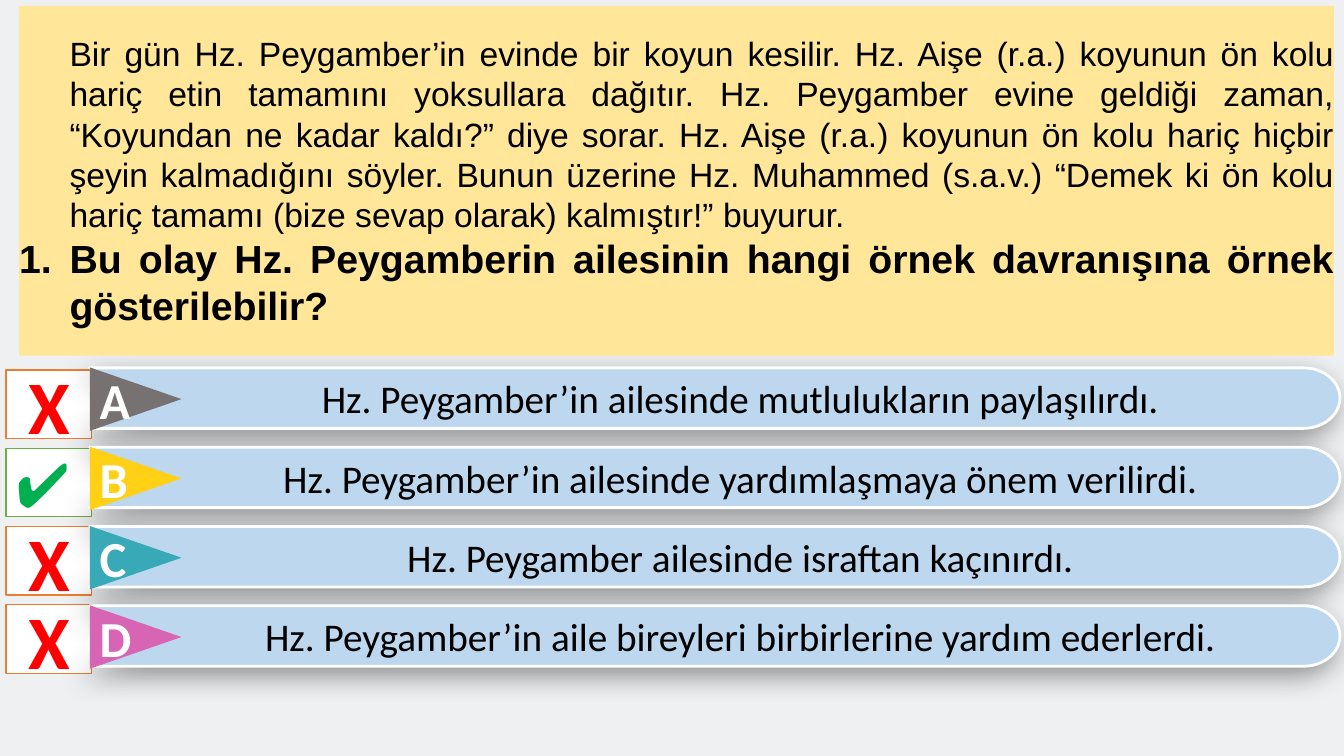
from dataclasses import dataclass
from math import cos, pi, sin
from typing import Any

from lxml.etree import SubElement
from pptx import Presentation
from pptx.dml.color import RGBColor
from pptx.enum.shapes import MSO_SHAPE
from pptx.enum.text import MSO_ANCHOR, PP_ALIGN
from pptx.oxml.ns import qn
from pptx.util import Inches, Pt


@dataclass(frozen=True)
class Theme:
    page: str = "EEF0F2"
    passage_fill: str = "FFE699"
    bar_fill: str = "BDD7EE"
    bar_line: str = "FFFFFF"
    ink: str = "000000"
    white: str = "FFFFFF"
    right: str = "00B050"
    right_line: str = "70AD47"
    wrong: str = "FF0000"
    wrong_line: str = "ED7D31"
    serifless: str = "Arial"
    rounded: str = "Calibri"
    passage_size: int = 24
    body_size: int = 28
    letter_size: int = 36
    check_size: int = 44
    cross_size: int = 54


@dataclass(frozen=True)
class Option:
    letter: str
    answer: str
    colour: str
    correct: bool = False


THEME = Theme()
OPTIONS = [
    Option("A", "Hz. Peygamber’in ailesinde mutlulukların paylaşılırdı.", "777171"),
    Option("B", "Hz. Peygamber’in ailesinde yardımlaşmaya önem verilirdi.", "FFD013", True),
    Option("C", "Hz. Peygamber ailesinde israftan kaçınırdı.", "38A9B7"),
    Option("D", "Hz. Peygamber’in aile bireyleri birbirlerine yardım ederlerdi.", "D864B4"),
]
PASSAGE = (
    "Bir gün Hz. Peygamber’in evinde bir koyun kesilir. Hz. Aişe (r.a.) koyunun ön kolu "
    "hariç etin tamamını yoksullara dağıtır. Hz. Peygamber evine geldiği zaman, “Koyundan "
    "ne kadar kaldı?” diye sorar. Hz. Aişe (r.a.) koyunun ön kolu hariç hiçbir şeyin "
    "kalmadığını söyler. Bunun üzerine Hz. Muhammed (s.a.v.) “Demek ki ön kolu hariç "
    "tamamı (bize sevap olarak) kalmıştır!” buyurur."
)
QUESTION = "Bu olay Hz. Peygamberin ailesinin hangi örnek davranışına örnek gösterilebilir?"
BAR_LEFT, BAR_RIGHT, BAR_HEIGHT = 0.89, 13.29, 0.6
NOTCH, ROUND_WIDTH, ARC_STEPS = 0.63, 0.36, 24
TAG_LENGTH = 0.91


def apply_format(target: Any, values: dict[str, Any]) -> None:
    for name, value in values.items():
        setattr(target, name, value)


def spread(first: float, last: float, index: int) -> float:
    return first + (last - first) * index / (len(OPTIONS) - 1)


def paint(shape: Any, fill: str, line: str | None = None, width: float = 1) -> None:
    shape.shadow.inherit = False
    shape.fill.solid()
    shape.fill.fore_color.rgb = RGBColor.from_string(fill)
    if line:
        shape.line.color.rgb = RGBColor.from_string(line)
        shape.line.width = Pt(width)
    else:
        shape.line.fill.background()


def write(paragraph: Any, text: str, font: str, size: int, colour: str,
          bold: bool = False, align: Any = PP_ALIGN.CENTER) -> None:
    paragraph.alignment = align
    run = paragraph.add_run()
    run.text = text
    apply_format(run.font, {"name": font, "size": Pt(size), "bold": bold})
    run.font.color.rgb = RGBColor.from_string(colour)


def indent(paragraph: Any, left: float, first: float = 0) -> Any:
    properties = paragraph._p.get_or_add_pPr()
    properties.set("marL", str(Inches(left)))
    properties.set("indent", str(Inches(first)))
    return properties


def centred_frame(shape: Any) -> Any:
    apply_format(shape.text_frame, {"word_wrap": True, "vertical_anchor": MSO_ANCHOR.MIDDLE})
    return shape.text_frame


def cast_shadow(shape: Any) -> None:
    effects = shape._element.spPr.find(qn("a:effectLst"))
    shadow = SubElement(effects, qn("a:outerShdw"), blurRad=str(Pt(20)), dist=str(Pt(7)),
                        dir=str(135 * 60000), algn="tr", rotWithShape="0")
    colour = SubElement(shadow, qn("a:srgbClr"), val=THEME.ink)
    SubElement(colour, qn("a:alpha"), val="40000")


def draw_mark(slide: Any, option: Option, top: float) -> None:
    mark = slide.shapes.add_shape(MSO_SHAPE.RECTANGLE, Inches(0.06), Inches(top),
                                  Inches(0.85), Inches(0.68))
    paint(mark, THEME.white, THEME.right_line if option.correct else THEME.wrong_line)
    paragraph = centred_frame(mark).paragraphs[0]
    if option.correct:
        write(paragraph, "✔", THEME.rounded, THEME.check_size, THEME.right, align=PP_ALIGN.LEFT)
    else:
        write(paragraph, "X", THEME.rounded, THEME.cross_size, THEME.wrong, True)


def draw_option(slide: Any, option: Option, top: float) -> None:
    group = slide.shapes.add_group_shape()
    radius = BAR_HEIGHT / 2
    middle = top + radius
    angles = [pi * step / ARC_STEPS - pi / 2 for step in range(ARC_STEPS + 1)]
    outline = [(BAR_RIGHT - ROUND_WIDTH * (1 - cos(angle)), middle + radius * sin(angle))
               for angle in angles]
    outline += [(BAR_LEFT, top + BAR_HEIGHT), (BAR_LEFT + NOTCH, middle)]
    builder = group.shapes.build_freeform(Inches(BAR_LEFT), Inches(top))
    builder.add_line_segments([(Inches(x), Inches(y)) for x, y in outline], close=True)
    bar = builder.convert_to_shape()
    paint(bar, THEME.bar_fill, THEME.bar_line, 2)
    cast_shadow(bar)
    answer = centred_frame(bar).paragraphs[0]
    answer.level = 1
    indent(answer, 0.5)
    write(answer, option.answer, THEME.rounded, THEME.body_size, THEME.ink)

    tag = group.shapes.add_shape(
        MSO_SHAPE.ISOSCELES_TRIANGLE, Inches(BAR_LEFT + (TAG_LENGTH - NOTCH) / 2),
        Inches(middle + 0.01 - TAG_LENGTH / 2), Inches(NOTCH), Inches(TAG_LENGTH))
    tag.rotation = 90
    paint(tag, option.colour)
    frame = centred_frame(tag)
    frame._txBody.bodyPr.set("vert", "vert270")
    write(frame.paragraphs[0], option.letter, THEME.rounded, THEME.letter_size, THEME.white, True)


def draw_passage(slide: Any) -> None:
    panel = slide.shapes.add_shape(MSO_SHAPE.RECTANGLE, Inches(0.19), Inches(0.06),
                                   Inches(13.04), Inches(3.47))
    paint(panel, THEME.passage_fill)
    frame = centred_frame(panel)
    sides = ("left", "top", "right", "bottom")
    apply_format(frame, {f"margin_{side}": 0 for side in sides})
    story = frame.paragraphs[0]
    story.level = 1
    indent(story, 0.5)
    write(story, PASSAGE, THEME.serifless, THEME.passage_size, THEME.ink,
          align=PP_ALIGN.JUSTIFY)
    question = frame.add_paragraph()
    numbering = indent(question, 0.5, -0.5)
    SubElement(numbering, qn("a:buFont"), typeface="+mj-lt")
    SubElement(numbering, qn("a:buAutoNum"), type="arabicPeriod")
    write(question, QUESTION, THEME.serifless, THEME.body_size, THEME.ink, True,
          PP_ALIGN.JUSTIFY)


def main() -> None:
    deck = Presentation()
    apply_format(deck, {"slide_width": Inches(13.33), "slide_height": Inches(7.5)})
    slide = deck.slides.add_slide(deck.slide_layouts[6])
    slide.background.fill.solid()
    slide.background.fill.fore_color.rgb = RGBColor.from_string(THEME.page)
    for index, option in enumerate(OPTIONS):
        draw_mark(slide, option, spread(3.67, 6, index))
    for index, option in enumerate(OPTIONS):
        draw_option(slide, option, spread(3.65, 6.01, index))
    draw_passage(slide)
    deck.save("out.pptx")


if __name__ == "__main__":
    main()
